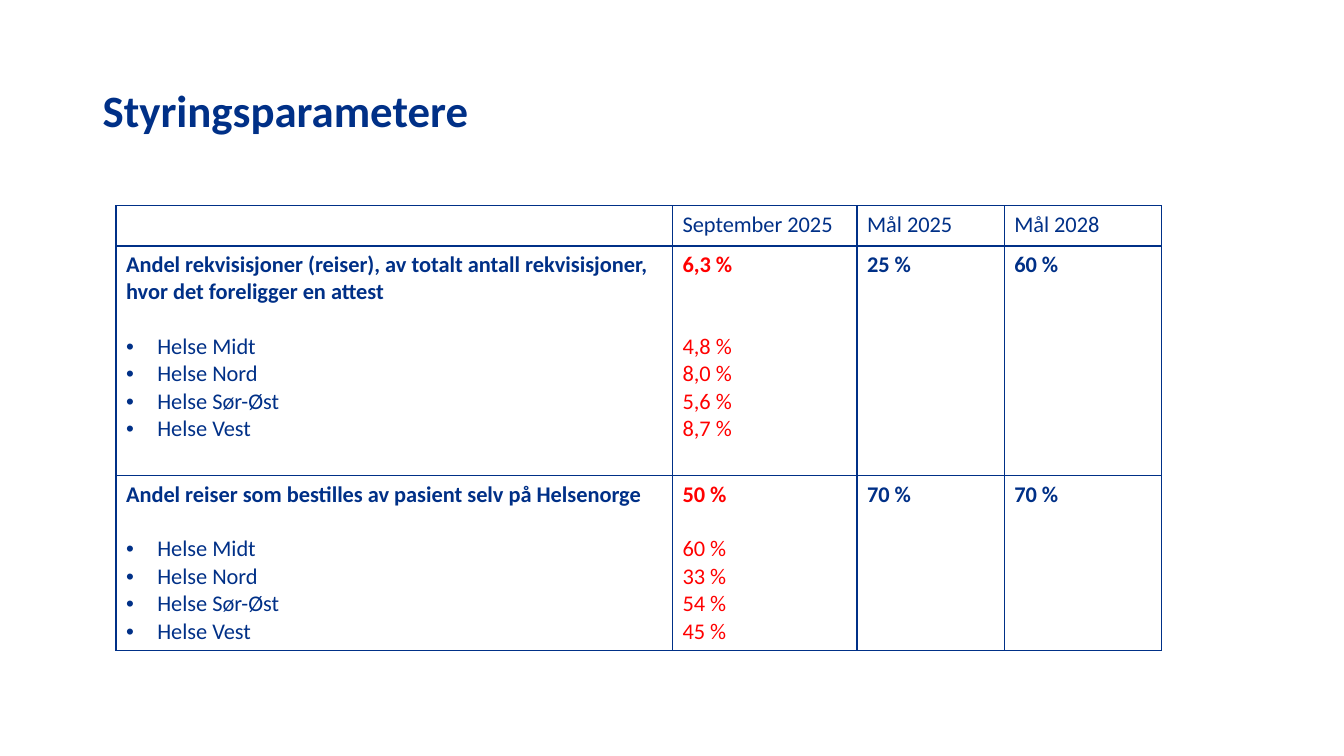
from dataclasses import dataclass

from lxml.etree import SubElement
from pptx import Presentation
from pptx.dml.color import RGBColor
from pptx.enum.text import MSO_ANCHOR
from pptx.oxml.ns import qn
from pptx.slide import Slide
from pptx.table import Table, _Cell as Cell
from pptx.text.text import _Paragraph as Paragraph
from pptx.util import Inches, Pt

NAVY = "003087"
RED = "FF0000"
FONT = "Calibri"
LINE_HEIGHT = 19.53
COLUMN_WIDTHS = (5.52, 1.83, 1.46, 1.56)
ROW_HEIGHTS = (0.4, 2.28, 1.73)
HEADINGS = ("", "September 2025", "Mål 2025", "Mål 2028")
REGIONS = ("Helse Midt", "Helse Nord", "Helse Sør-Øst", "Helse Vest")


@dataclass(frozen=True)
class Indicator:
    name: str
    total: str
    regional: tuple[str, ...]
    targets: tuple[str, str]
    name_lines: int


INDICATORS = (
    Indicator(
        "Andel rekvisisjoner (reiser), av totalt antall rekvisisjoner, "
        "hvor det foreligger en attest",
        "6,3 %", ("4,8 %", "8,0 %", "5,6 %", "8,7 %"), ("25 %", "60 %"), 2,
    ),
    Indicator(
        "Andel reiser som bestilles av pasient selv på Helsenorge",
        "50 %", ("60 %", "33 %", "54 %", "45 %"), ("70 %", "70 %"), 1,
    ),
)


def rgb(value: str) -> RGBColor:
    return RGBColor.from_string(value)


def style(paragraph: Paragraph, color: str, bold: bool, size: float = 16) -> None:
    font = paragraph.font
    font.name, font.size, font.bold = FONT, Pt(size), bold
    font.color.rgb = rgb(color)
    for run in paragraph.runs:
        run.font.name, run.font.size, run.font.bold = FONT, Pt(size), bold
        run.font.color.rgb = rgb(color)


def add_bullet(paragraph: Paragraph) -> None:
    properties = paragraph._p.get_or_add_pPr()
    properties.set("marL", str(Inches(0.31)))
    properties.set("indent", str(Inches(-0.31)))
    SubElement(properties, qn("a:buFont"), typeface="Arial")
    SubElement(properties, qn("a:buChar"), char="•")


def set_borders(cell: Cell) -> None:
    properties = cell._tc.get_or_add_tcPr()
    for side in ("lnL", "lnR", "lnT", "lnB"):
        line = SubElement(properties, qn(f"a:{side}"), w=str(Pt(1)))
        fill = SubElement(line, qn("a:solidFill"))
        SubElement(fill, qn("a:srgbClr"), val=NAVY)


def fill_cell(
    cell: Cell,
    lead: str,
    details: tuple[str, ...] = (),
    color: str = NAVY,
    bold: bool = True,
    bulleted: bool = False,
    gap_lines: int = 0,
) -> None:
    set_borders(cell)
    cell.fill.background()
    cell.text_frame.text = "\n".join((lead, *details))
    for index, paragraph in enumerate(cell.text_frame.paragraphs):
        if index == 1:
            paragraph.space_before = Pt(LINE_HEIGHT * gap_lines)
        if index and bulleted:
            add_bullet(paragraph)
        style(paragraph, color, bold and index == 0)


def add_title(slide: Slide) -> None:
    title = slide.shapes.add_textbox(
        Inches(0.92), Inches(0.4), Inches(11.5), Inches(1.45)
    ).text_frame
    title.word_wrap = True
    title.vertical_anchor = MSO_ANCHOR.MIDDLE
    title.text = "Styringsparametere"
    title.paragraphs[0].line_spacing = 0.9
    style(title.paragraphs[0], NAVY, True, 32)


def add_indicator_table(slide: Slide) -> Table:
    table = slide.shapes.add_table(
        len(ROW_HEIGHTS), len(COLUMN_WIDTHS), Inches(1.15), Inches(2.04),
        Inches(sum(COLUMN_WIDTHS)), Inches(sum(ROW_HEIGHTS)),
    ).table
    table.first_row = table.horz_banding = False
    for column, width in zip(table.columns, COLUMN_WIDTHS):
        column.width = Inches(width)
    for row, height in zip(table.rows, ROW_HEIGHTS):
        row.height = Inches(height)
    return table


def main() -> None:
    presentation = Presentation()
    presentation.slide_width = Inches(13.33)
    presentation.slide_height = Inches(7.5)
    slide = presentation.slides.add_slide(presentation.slide_layouts[6])
    add_title(slide)
    table = add_indicator_table(slide)
    for column, heading in enumerate(HEADINGS):
        fill_cell(table.cell(0, column), heading, bold=False)
    for row, indicator in enumerate(INDICATORS, start=1):
        fill_cell(table.cell(row, 0), indicator.name, REGIONS,
                  bulleted=True, gap_lines=1)
        fill_cell(table.cell(row, 1), indicator.total, indicator.regional,
                  color=RED, gap_lines=indicator.name_lines)
        for column, target in enumerate(indicator.targets, start=2):
            fill_cell(table.cell(row, column), target)
    presentation.save("out.pptx")


if __name__ == "__main__":
    main()
